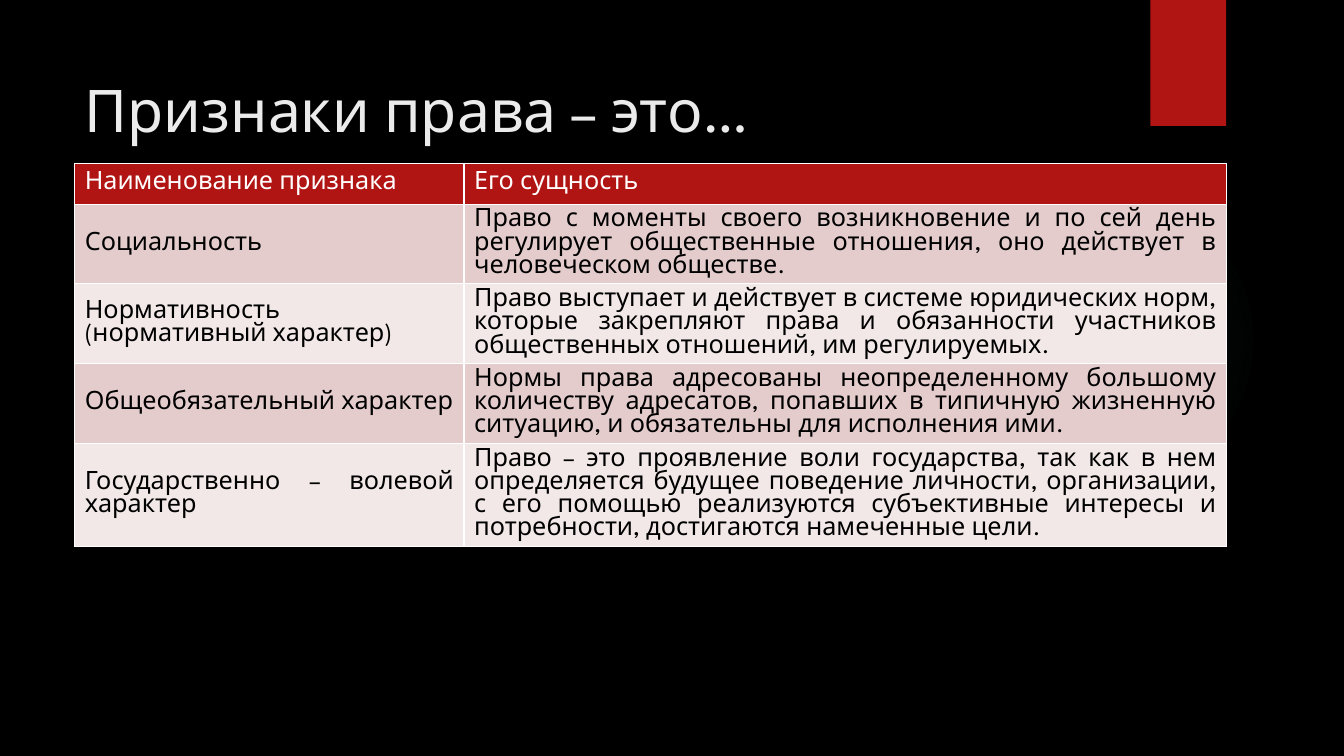
from dataclasses import dataclass

from lxml import etree
from pptx import Presentation
from pptx.dml.color import RGBColor as RGB
from pptx.enum.shapes import MSO_SHAPE as SHAPE
from pptx.enum.text import MSO_ANCHOR as ANCHOR, PP_ALIGN as ALIGN
from pptx.oxml import parse_xml
from pptx.oxml.ns import nsdecls, qn
from pptx.util import Pt


@dataclass(frozen=True)
class Theme:
    font: str = "League Spartan"
    title_size: int = 42
    table_size: int = 18
    background: str = "000000"
    accent: str = "B01513"
    glow: str = "50B9C1"
    title: str = "EBEBEB"
    header_text: str = "FFFFFF"
    body_text: str = "000000"
    border: str = "FFFFFF"
    bands: tuple = ("E4CCCC", "F2E8E7")


THEME = Theme()
TITLE = "Признаки права – это…"
HEADER = ("Наименование признака", "Его сущность")
FEATURES = [
    ("Социальность",
     "Право с моменты своего возникновение и по сей день регулирует общественные "
     "отношения, оно действует в человеческом обществе."),
    ("Нормативность (нормативный характер)",
     "Право выступает и действует в системе юридических норм, которые закрепляют "
     "права и обязанности участников общественных отношений, им регулируемых."),
    ("Общеобязательный характер",
     "Нормы права адресованы неопределенному большому количеству адресатов, попавших "
     "в типичную жизненную ситуацию, и обязательны для исполнения ими."),
    ("Государственно – волевой характер",
     "Право – это проявление воли государства, так как в нем определяется будущее "
     "поведение личности, организации, с его помощью реализуются субъективные "
     "интересы и потребности, достигаются намеченные цели."),
]
ROW_HEIGHTS = (29.2, 57, 57, 57, 73.6)
NAME_COLUMN_SHARE = 0.338


def set_font(font, size, color):
    for attribute, value in {"name": THEME.font, "size": Pt(size), "bold": False}.items():
        setattr(font, attribute, value)
    font.color.rgb = RGB.from_string(color)


def add_plain_shape(slide, kind, box):
    shape = slide.shapes.add_shape(kind, *map(Pt, box))
    shape.shadow.inherit = False
    shape.line.fill.background()
    return shape


def add_glow(slide, box):
    """Add a faint round glow that fades out towards its edge."""
    glow = add_plain_shape(slide, SHAPE.OVAL, box)
    stops = "".join(
        f'<a:gs pos="{position * 1000}"><a:srgbClr val="{THEME.glow}">'
        f'<a:alpha val="{alpha * 1000}"/></a:srgbClr></a:gs>'
        for position, alpha in ((0, 7), (36, 6), (69, 0)))
    gradient = parse_xml(
        f'<a:gradFill {nsdecls("a")}><a:gsLst>{stops}</a:gsLst><a:path path="circle">'
        '<a:fillToRect l="50000" t="50000" r="50000" b="50000"/></a:path></a:gradFill>')
    glow.element.spPr.find(qn("a:prstGeom")).addnext(gradient)


def add_ribbon(slide, box):
    ribbon = add_plain_shape(slide, SHAPE.RECTANGLE, box)
    ribbon.fill.solid()
    ribbon.fill.fore_color.rgb = RGB.from_string(THEME.accent)


def place_title(slide, box):
    title = slide.shapes.title
    for attribute, value in zip(("left", "top", "width", "height"), box):
        setattr(title, attribute, Pt(value))
    frame = title.text_frame
    frame.text = TITLE
    frame.word_wrap = True
    frame.vertical_anchor = ANCHOR.BOTTOM
    paragraph = frame.paragraphs[0]
    paragraph.alignment = ALIGN.LEFT
    set_font(paragraph.runs[0].font, THEME.title_size, THEME.title)


def add_borders(cell):
    properties = cell._tc.get_or_add_tcPr()
    for index, side in enumerate(("lnL", "lnR", "lnT", "lnB")):
        line = etree.Element(qn(f"a:{side}"), w=str(Pt(1)))
        fill = etree.SubElement(line, qn("a:solidFill"))
        etree.SubElement(fill, qn("a:srgbClr"), val=THEME.border)
        properties.insert(index, line)


def fill_cell(cell, text, fill, color):
    cell.text = text
    cell.vertical_anchor = ANCHOR.MIDDLE
    cell.fill.solid()
    cell.fill.fore_color.rgb = RGB.from_string(fill)
    paragraph = cell.text_frame.paragraphs[0]
    paragraph.alignment = ALIGN.JUSTIFY
    set_font(paragraph.runs[0].font, THEME.table_size, color)
    add_borders(cell)


def add_features_table(slide, left, top, width):
    rows = [HEADER, *FEATURES]
    table = slide.shapes.add_table(
        len(rows), len(HEADER), Pt(left), Pt(top), Pt(width), Pt(sum(ROW_HEIGHTS))).table
    name_width = width * NAME_COLUMN_SHARE
    for column, column_width in zip(table.columns, (name_width, width - name_width)):
        column.width = Pt(column_width)
    for index, (texts, height) in enumerate(zip(rows, ROW_HEIGHTS)):
        table.rows[index].height = Pt(height)
        if index == 0:
            fill, color = THEME.accent, THEME.header_text
        else:
            fill, color = THEME.bands[(index - 1) % 2], THEME.body_text
        for cell, text in zip(table.rows[index].cells, texts):
            fill_cell(cell, text, fill, color)


def build_features_slide(presentation):
    slide = presentation.slides.add_slide(presentation.slide_layouts[5])
    slide.background.fill.solid()
    slide.background.fill.fore_color.rgb = RGB.from_string(THEME.background)
    add_glow(slide, (677.5, 131.8, 221.8, 221.8))
    add_ribbon(slide, (821.8, 0, 54, 90))
    place_title(slide, (53.4, 48.2, 583.2, 58.3))
    add_features_table(slide, 53.4, 116.6, 822.8)


def main():
    presentation = Presentation()
    presentation.slide_width, presentation.slide_height = Pt(960), Pt(540)
    build_features_slide(presentation)
    presentation.save("out.pptx")


if __name__ == "__main__":
    main()
